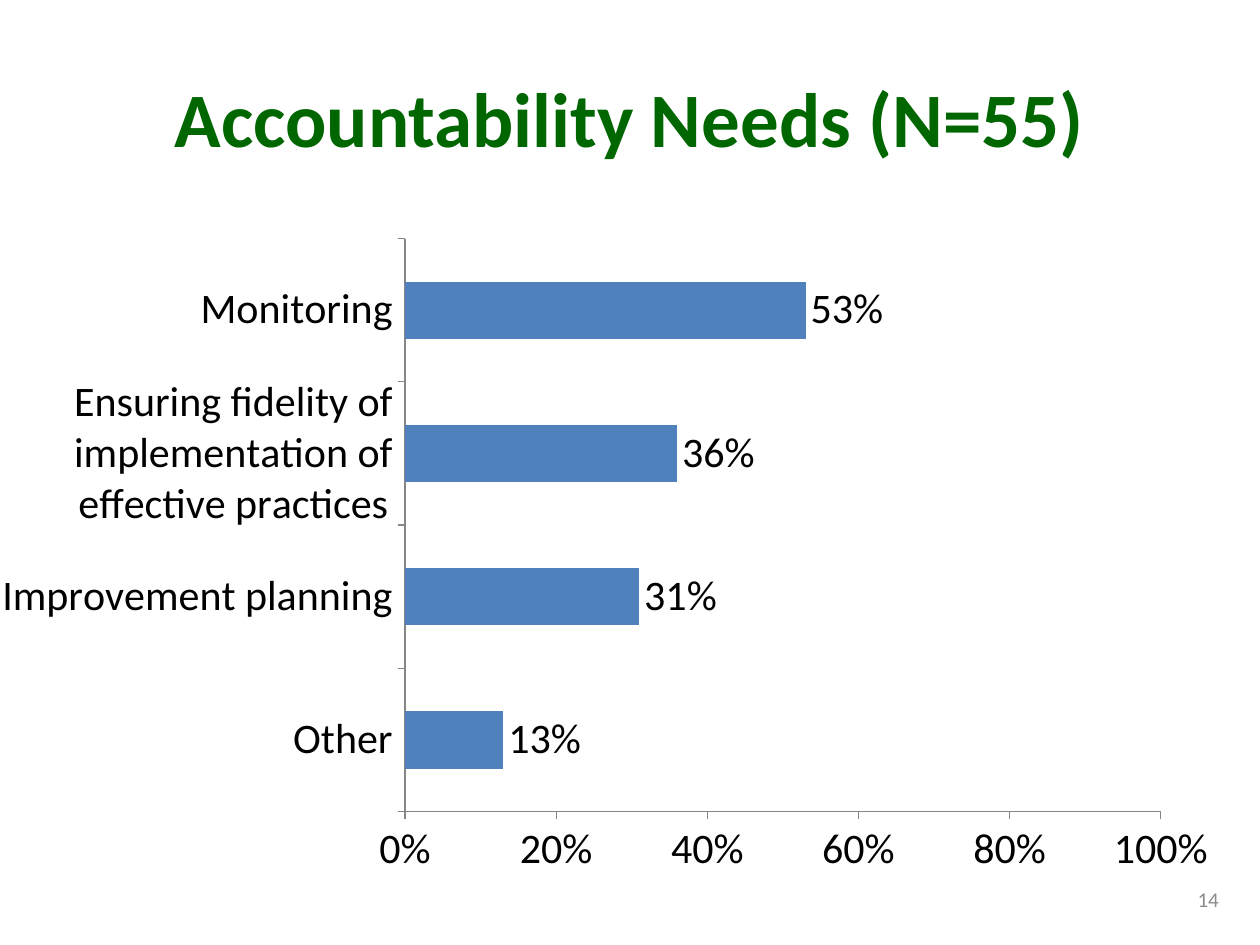
from lxml import etree
from pptx import Presentation
from pptx.chart.data import CategoryChartData
from pptx.dml.color import RGBColor
from pptx.enum import chart as kinds, text
from pptx.oxml.ns import qn
from pptx.util import Pt

GREEN = RGBColor(0x00, 0x66, 0x00)
BLUE = RGBColor(0x4F, 0x81, 0xBD)
BLACK = RGBColor(0x00, 0x00, 0x00)
GREY = RGBColor(0x8C, 0x8C, 0x8C)
AXIS_GREY = RGBColor(0x86, 0x86, 0x86)
FONT = "Calibri"

NEEDS = {
    "Other": 0.13,
    "Improvement planning": 0.31,
    "Ensuring fidelity of implementation of effective practices": 0.36,
    "Monitoring": 0.53,
}


def style_font(font, size, color, bold=False):
    font.name = FONT
    font.size = Pt(size)
    font.bold = bold
    font.color.rgb = color


deck = Presentation()
deck.slide_width, deck.slide_height = Pt(720), Pt(540)
page = deck.slides.add_slide(deck.slide_layouts[5])

# Title
title = page.shapes.title
title.left, title.top, title.width, title.height = Pt(36), Pt(21.6), Pt(648), Pt(90)
title.text_frame.text = "Accountability Needs (N=55)"
title.text_frame.vertical_anchor = text.MSO_ANCHOR.MIDDLE
heading = title.text_frame.paragraphs[0]
heading.alignment = text.PP_ALIGN.CENTER
style_font(heading.runs[0].font, 44, GREEN, bold=True)

# Bar chart
data = CategoryChartData(number_format="0%")
data.categories = list(NEEDS)
data.add_series("Series 1", list(NEEDS.values()))
chart = page.shapes.add_chart(
    kinds.XL_CHART_TYPE.BAR_CLUSTERED, Pt(-13), Pt(72), Pt(732), Pt(432), data
).chart
chart.has_title = False
chart.has_legend = False
style_font(chart.font, 24, BLACK)

plot = chart.plots[0]
plot.gap_width = 150
plot.vary_by_categories = False
fill = plot.series[0].format.fill
fill.solid()
fill.fore_color.rgb = BLUE

plot.has_data_labels = True
labels = plot.data_labels
labels.show_value = True
labels.number_format = "0%"
labels.number_format_is_linked = False
labels.position = kinds.XL_LABEL_POSITION.OUTSIDE_END
style_font(labels.font, 24, BLACK)

for axis in (chart.category_axis, chart.value_axis):
    axis.has_major_gridlines = False
    axis.major_tick_mark = kinds.XL_TICK_MARK.OUTSIDE
    axis.minor_tick_mark = kinds.XL_TICK_MARK.NONE
    axis.format.line.color.rgb = AXIS_GREY
    axis.format.line.width = Pt(0.75)
    style_font(axis.tick_labels.font, 24, BLACK)

scale = chart.value_axis
scale.minimum_scale, scale.maximum_scale, scale.major_unit = 0, 1, 0.2
scale.tick_labels.number_format = "0%"
scale.tick_labels.number_format_is_linked = False

# Fixed inner plot area, as fractions of the chart
plot_area = chart._chartSpace.chart.plotArea
for old_layout in plot_area.findall(qn("c:layout")):
    plot_area.remove(old_layout)
layout = etree.Element(qn("c:layout"))
plot_area.insert(0, layout)
manual = etree.SubElement(layout, qn("c:manualLayout"))
for tag, value in (
    ("layoutTarget", "inner"), ("xMode", "edge"), ("yMode", "edge"),
    ("x", "0.334"), ("y", "0.149"), ("w", "0.59"), ("h", "0.758"),
):
    etree.SubElement(manual, qn(f"c:{tag}")).set("val", value)

# Slide number
number = page.shapes.add_textbox(Pt(673.6), Pt(502.8), Pt(30), Pt(22))
number.text_frame.text = "14"
number.text_frame.word_wrap = False
number.text_frame.vertical_anchor = text.MSO_ANCHOR.BOTTOM
para = number.text_frame.paragraphs[0]
para.alignment = text.PP_ALIGN.RIGHT
style_font(para.runs[0].font, 12, GREY)

deck.save("out.pptx")
